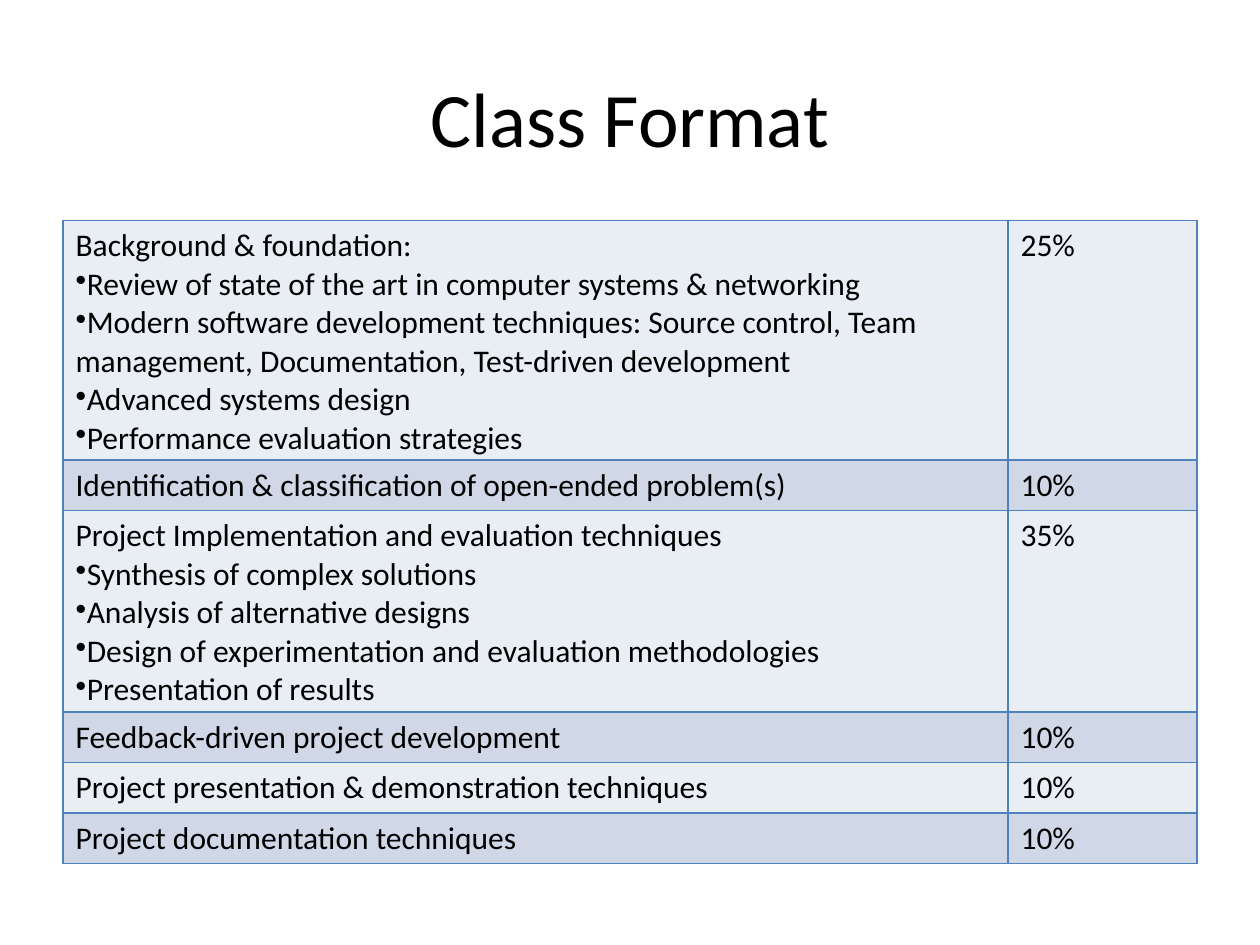
from lxml import etree
from pptx import Presentation
from pptx import util as u
from pptx.dml.color import RGBColor
from pptx.enum import text
from pptx.oxml.ns import qn

FONT = "Calibri"
BLACK = RGBColor(0x00, 0x00, 0x00)
BORDER = RGBColor(0x4F, 0x81, 0xBD)
BANDS = (RGBColor(0xE9, 0xED, 0xF4), RGBColor(0xD0, 0xD8, 0xE8))

# Topic, its bullet points, share of the class
TOPICS = [
    ("Background & foundation:", [
        "Review of state of the art in computer systems & networking",
        "Modern software development techniques: Source control, "
        "Team management, Documentation, Test-driven development",
        "Advanced systems design",
        "Performance evaluation strategies",
    ], "25%"),
    ("Identification & classification of open-ended problem(s)", [], "10%"),
    ("Project Implementation and evaluation techniques", [
        "Synthesis of complex solutions",
        "Analysis of alternative designs",
        "Design of experimentation and evaluation methodologies",
        "Presentation of results",
    ], "35%"),
    ("Feedback-driven project development", [], "10%"),
    ("Project presentation & demonstration techniques", [], "10%"),
    ("Project documentation techniques", [], "10%"),
]


def format_runs(paragraph, size):
    for run in paragraph.runs:
        run.font.name = FONT
        run.font.size = u.Pt(size)
        run.font.color.rgb = BLACK


def add_bullet(paragraph):
    properties = paragraph._p.get_or_add_pPr()
    etree.SubElement(properties, qn("a:buChar"), char="•")


def add_borders(cell):
    properties = cell._tc.get_or_add_tcPr()
    for side in ("lnL", "lnR", "lnT", "lnB"):
        line = etree.SubElement(properties, qn("a:" + side), w=str(u.Pt(1)))
        fill = etree.SubElement(line, qn("a:solidFill"))
        etree.SubElement(fill, qn("a:srgbClr"), val=str(BORDER))


def fill_cell(cell, lines, color):
    """Write a heading line followed by bulleted lines."""
    add_borders(cell)
    cell.fill.solid()
    cell.fill.fore_color.rgb = color
    cell.text_frame.text = "\n".join(lines)
    for index, paragraph in enumerate(cell.text_frame.paragraphs):
        format_runs(paragraph, 18)
        if index:
            add_bullet(paragraph)


def add_title(slide, left, top, width, height):
    shape = slide.shapes.add_textbox(left, top, width, height)
    frame = shape.text_frame
    frame.word_wrap = True
    frame.vertical_anchor = text.MSO_ANCHOR.MIDDLE
    frame.text = "Class Format"
    paragraph = frame.paragraphs[0]
    paragraph.alignment = text.PP_ALIGN.CENTER
    format_runs(paragraph, 44)


def add_topic_table(slide, left, top, width, row_height):
    share_width = u.Inches(1.5)
    table = slide.shapes.add_table(
        len(TOPICS), 2, left, top, width, row_height * len(TOPICS)).table
    table.first_row = False
    table.columns[0].width = width - share_width
    table.columns[1].width = share_width
    for row, (topic, points, share) in enumerate(TOPICS):
        color = BANDS[row % 2]
        fill_cell(table.cell(row, 0), [topic, *points], color)
        fill_cell(table.cell(row, 1), [share], color)


def main():
    presentation = Presentation()
    presentation.slide_width = u.Inches(10)
    presentation.slide_height = u.Inches(7.5)
    slide = presentation.slides.add_slide(presentation.slide_layouts[6])
    left, width = u.Inches(0.5), u.Inches(9)
    add_title(slide, left, u.Inches(0.3), width, u.Inches(1.25))
    add_topic_table(slide, left, u.Inches(1.75), width, u.Inches(0.4))
    presentation.save("out.pptx")


if __name__ == "__main__":
    main()
